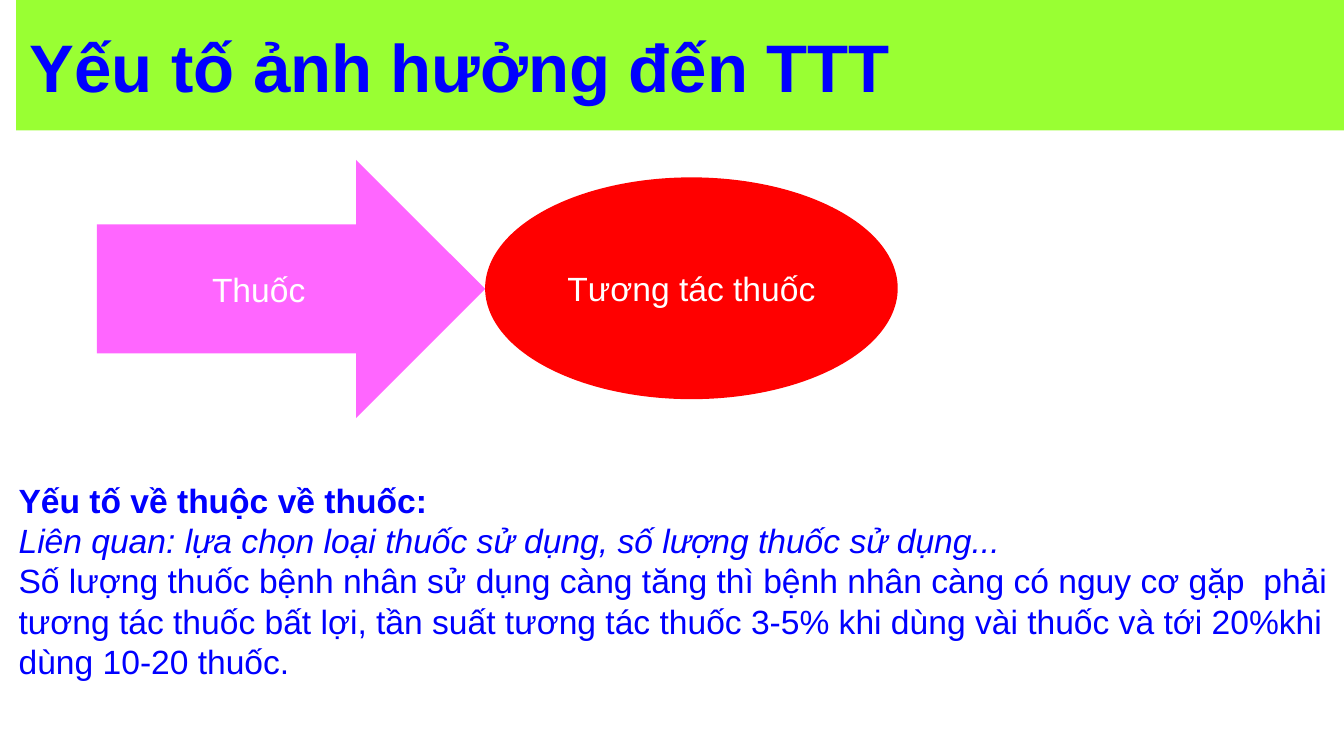
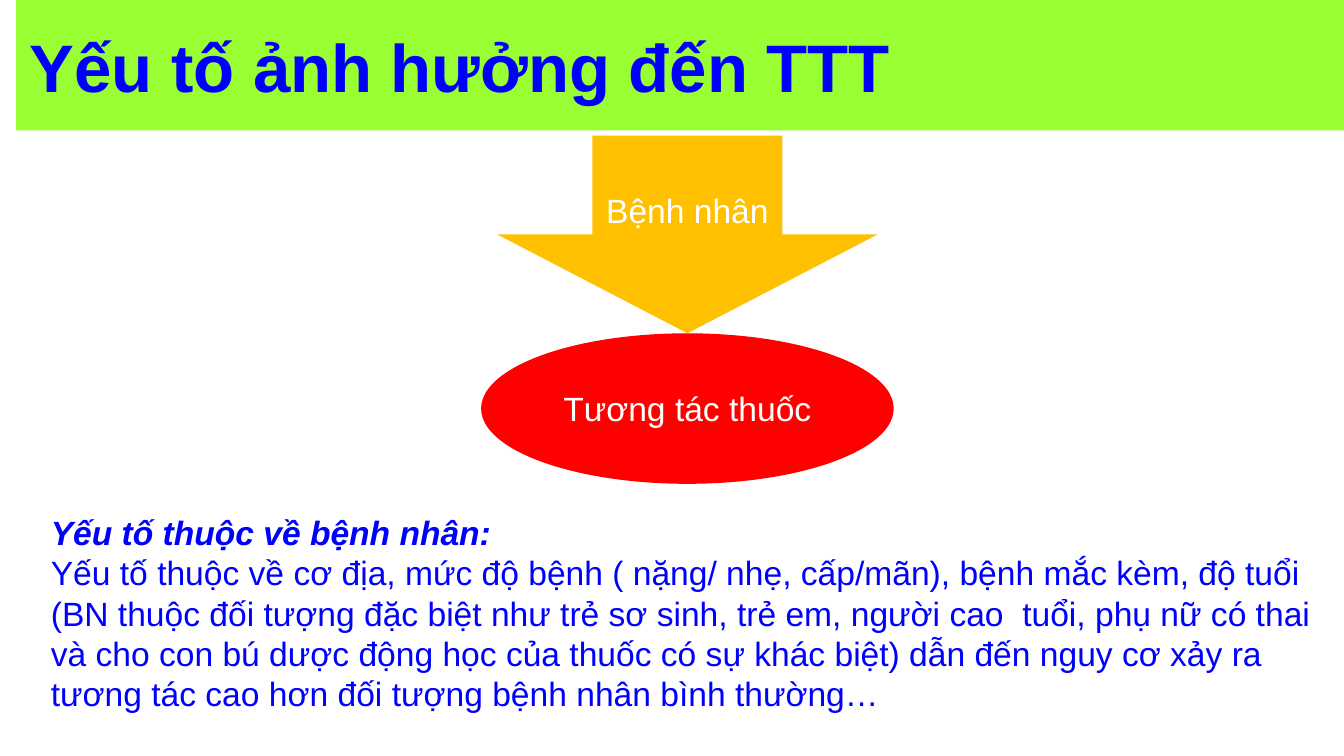
from pptx import Presentation
from pptx.dml.color import RGBColor
from pptx.enum.shapes import MSO_SHAPE as Shape
from pptx.enum.text import MSO_ANCHOR as Anchor, PP_ALIGN as Align
from pptx.util import Inches, Pt

FONT = "Arial"
BLUE, WHITE, RED = "0000FF", "FFFFFF", "FF0000"
LIME, PINK, AMBER = "99FF33", "FF66FF", "FFC000"
TITLE = "Yếu tố ảnh hưởng đến TTT"
OUTCOME = "Tương tác thuốc"


def color(hex_code):
    """Return the RGB colour for a hex string."""
    return RGBColor.from_string(hex_code)


def style(paragraph, size, hex_code, bold=False, italic=False):
    """Set the font of a whole paragraph."""
    font = paragraph.font
    font.name, font.size = FONT, Pt(size)
    font.bold, font.italic = bold, italic
    font.color.rgb = color(hex_code)


def add_filled(slide, kind, box, fill, text, size=18, text_color=WHITE,
               align=Align.CENTER, bold=False):
    """Add a flat, borderless shape with one line of text."""
    shape = slide.shapes.add_shape(kind, *map(Inches, box))
    shape.shadow.inherit = False
    shape.fill.solid()
    shape.fill.fore_color.rgb = color(fill)
    shape.line.fill.background()
    frame = shape.text_frame
    frame.word_wrap = True
    frame.vertical_anchor = Anchor.MIDDLE
    if align == Align.CENTER:
        frame.margin_left = frame.margin_right = Inches(0.05)
    paragraph = frame.paragraphs[0]
    paragraph.text = text
    paragraph.alignment = align
    style(paragraph, size, text_color, bold)


def add_explanation(slide, box, lines):
    """Add the blue explanation from (text, bold, italic) lines."""
    frame = slide.shapes.add_textbox(*map(Inches, box)).text_frame
    frame.word_wrap = True
    for index, (text, bold, italic) in enumerate(lines):
        paragraph = frame.add_paragraph() if index else frame.paragraphs[0]
        paragraph.text = text
        style(paragraph, 18, BLUE, bold, italic)


def add_factor_slide(presentation, arrow, ellipse_box, text_box, lines):
    """Add a slide where one factor's arrow leads to the drug interaction."""
    slide = presentation.slides.add_slide(presentation.slide_layouts[6])
    add_filled(slide, Shape.RECTANGLE, (0.12, 0, 9.88, 0.97), LIME, TITLE,
               36, BLUE, Align.LEFT, True)
    add_filled(slide, *arrow)
    add_filled(slide, Shape.OVAL, ellipse_box, RED, OUTCOME)
    add_explanation(slide, text_box, lines)


def main():
    """Build and save the presentation."""
    presentation = Presentation()
    presentation.slide_width = Inches(10)
    presentation.slide_height = Inches(10 * 9 / 16)
    add_factor_slide(
        presentation,
        (Shape.RIGHT_ARROW, (0.72, 1.19, 2.89, 1.92), PINK, "Thuốc"),
        (3.61, 1.32, 3.07, 1.65),
        (0.04, 3.52, 9.96, 1.62),
        [("Yếu tố về thuộc về thuốc:", True, False),
         ("Liên quan: lựa chọn loại thuốc sử dụng, số lượng thuốc sử dụng...",
          False, True),
         ("Số lượng thuốc bệnh nhân sử dụng càng tăng thì bệnh nhân càng có "
          "nguy cơ gặp  phải tương tác thuốc bất lợi, tần suất tương tác "
          "thuốc 3-5% khi dùng vài thuốc và tới 20%khi dùng 10-20 thuốc.",
          False, False)])
    add_factor_slide(
        presentation,
        (Shape.DOWN_ARROW, (3.7, 1.01, 2.83, 1.47), AMBER, "Bệnh nhân"),
        (3.58, 2.48, 3.07, 1.12),
        (0.28, 3.76, 9.61, 1.62),
        [("Yếu tố thuộc về bệnh nhân:", True, True),
         ("Yếu tố thuộc về cơ địa, mức độ bệnh ( nặng/ nhẹ, cấp/mãn), bệnh "
          "mắc kèm, độ tuổi (BN thuộc đối tượng đặc biệt như trẻ sơ sinh, "
          "trẻ em, người cao  tuổi, phụ nữ có thai và cho con bú dược động "
          "học của thuốc có sự khác biệt) dẫn đến nguy cơ xảy ra tương tác "
          "cao hơn đối tượng bệnh nhân bình thường…", False, False)])
    presentation.save("out.pptx")


if __name__ == "__main__":
    main()
